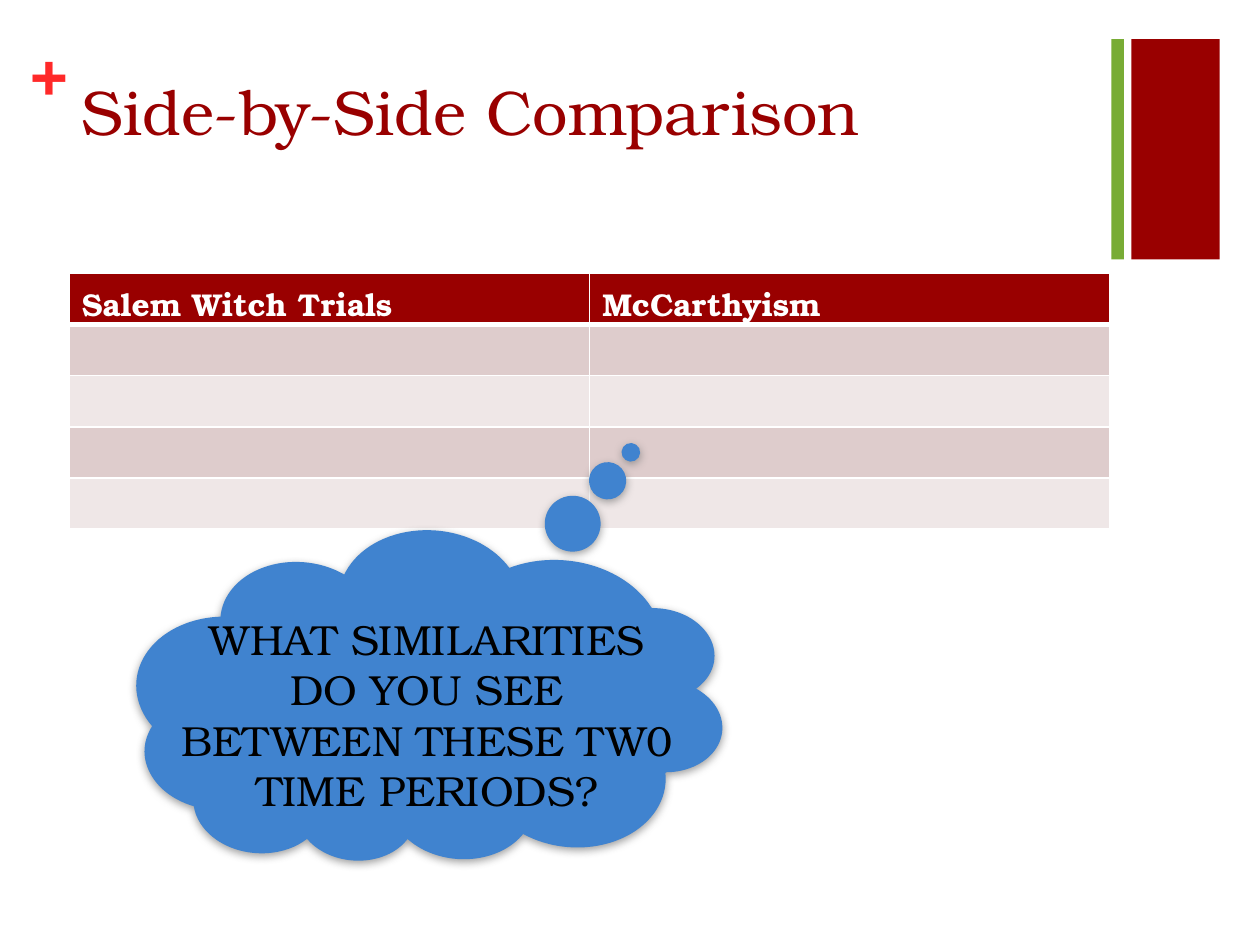
from lxml import etree
from pptx import Presentation
from pptx import util as u
from pptx.dml.color import RGBColor
from pptx.enum import shapes, text
from pptx.oxml import ns

FONT = "TeX Gyre Bonum"
RED, BRIGHT_RED, GREEN, BLUE = "990000", "FF2929", "78AC35", "4083CF"
WHITE, BLACK, GREY = "FFFFFF", "000000", "808080"
BANDS = ["DECCCC", "EFE7E7"]


def color(value):
    return RGBColor.from_string(value)


def add_xml(parent, tag, **attributes):
    return etree.SubElement(parent, ns.qn(tag), attributes)


class SlideBuilder:
    def __init__(self, slide):
        self.slide = slide

    def box(self, left, top, width, height):
        return [u.Inches(v) for v in (left, top, width, height)]

    def style_run(self, run, size, hue, bold=False):
        run.font.name = FONT
        run.font.size = u.Pt(size)
        run.font.bold = bold
        run.font.color.rgb = color(hue)

    def shape(self, kind, place, fill):
        shape = self.slide.shapes.add_shape(kind, *self.box(*place))
        shape.shadow.inherit = False
        shape.fill.solid()
        shape.fill.fore_color.rgb = color(fill)
        shape.line.fill.background()
        return shape

    def text(self, words, place, size, hue, bold=False, align=None, margins=True):
        label = self.slide.shapes.add_textbox(*self.box(*place))
        frame = label.text_frame
        frame.word_wrap = True
        if not margins:
            frame.margin_left = frame.margin_right = 0
            frame.margin_top = frame.margin_bottom = 0
        frame.text = words
        frame.paragraphs[0].alignment = align
        self.style_run(frame.paragraphs[0].runs[0], size, hue, bold)

    def soft_shadow(self, shape):
        effects = shape._element.spPr.find(ns.qn("a:effectLst"))
        shadow = add_xml(effects, "a:outerShdw", blurRad=str(u.Pt(5)),
                         dist=str(u.Pt(2)), dir="5400000", rotWithShape="0")
        hue = add_xml(shadow, "a:srgbClr", val=GREY)
        add_xml(hue, "a:alpha", val="75000")

    def cell_borders(self, cell, bottom):
        properties = cell._tc.get_or_add_tcPr()
        widths = {"a:lnL": 1, "a:lnR": 1, "a:lnT": 1, "a:lnB": bottom}
        for position, (tag, width) in enumerate(widths.items()):
            line = add_xml(properties, tag, w=str(u.Pt(width)))
            add_xml(add_xml(line, "a:solidFill"), "a:srgbClr", val=WHITE)
            properties.insert(position, line)

    def table(self, headings, blank_rows, place):
        rows = blank_rows + 1
        frame = self.slide.shapes.add_table(rows, len(headings), *self.box(*place))
        for r, row in enumerate(frame.table.rows):
            for c, cell in enumerate(row.cells):
                cell.fill.solid()
                cell.fill.fore_color.rgb = color(BANDS[(r - 1) % 2] if r else RED)
                self.cell_borders(cell, bottom=1 if r else 3)
                paragraph = cell.text_frame.paragraphs[0]
                if r == 0:
                    paragraph.text = headings[c]
                    self.style_run(paragraph.runs[0], 18, WHITE, bold=True)
                else:
                    # Empty cells keep the table font, which sets row height
                    end = add_xml(paragraph._p, "a:endParaRPr", sz="1800")
                    add_xml(end, "a:latin", typeface=FONT)


def main():
    deck = Presentation()
    deck.slide_width, deck.slide_height = u.Inches(10), u.Inches(7.5)
    builder = SlideBuilder(deck.slides.add_slide(deck.slide_layouts[6]))
    rectangle = shapes.MSO_SHAPE.RECTANGLE

    # Corner decoration
    builder.shape(rectangle, (8.98, 0.31, 0.7, 1.75), RED)
    builder.text("+", (0.24, 0.25, 0.29, 0.61), 36, BRIGHT_RED, bold=True, margins=False)
    builder.shape(rectangle, (8.82, 0.31, 0.1, 1.75), GREEN)

    # Title
    builder.text("Side-by-Side Comparison", (0.55, 0.53, 8.26, 1.22), 36, RED)

    # Comparison table
    builder.table(["Salem Witch Trials", "McCarthyism"], 4, (0.55, 2.17, 8.26, 2.03))

    # Thought cloud with its question
    cloud = builder.shape(shapes.MSO_SHAPE.CLOUD_CALLOUT, (1.08, 4.22, 4.66, 2.66), BLUE)
    cloud.rotation = 184.3
    cloud.adjustments[0], cloud.adjustments[1] = -0.31, 0.78
    builder.soft_shadow(cloud)
    builder.text("WHAT SIMILARITIES DO YOU SEE BETWEEN THESE TW0 TIME PERIODS?",
                 (1.29, 4.82, 4.2, 1.72), 24, BLACK, align=text.PP_ALIGN.CENTER)

    deck.save("out.pptx")


if __name__ == "__main__":
    main()
